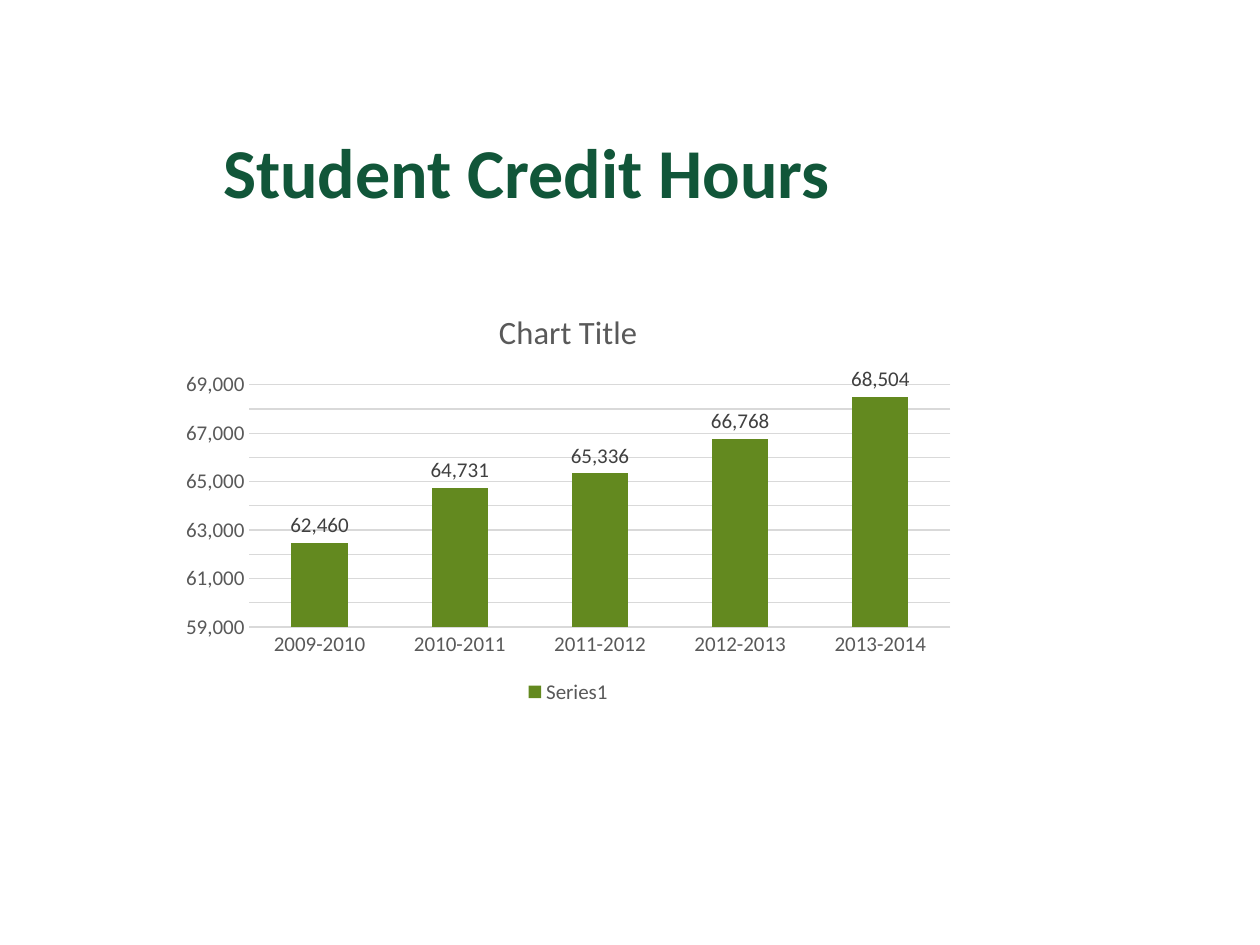
"""Build the Student Credit Hours slide with its column chart."""
from typing import NamedTuple

from pptx import Presentation
from pptx.chart.data import CategoryChartData
from pptx.dml.color import RGBColor
from pptx.enum.chart import (XL_CHART_TYPE, XL_LABEL_POSITION,
                             XL_LEGEND_POSITION, XL_TICK_MARK)
from pptx.enum.text import MSO_ANCHOR, MSO_AUTO_SIZE, PP_ALIGN
from pptx.util import Pt

GREEN, LEAF = "115639", "63891F"
GREY, DARK, PALE = "595959", "404040", "D9D9D9"


class Year(NamedTuple):
    span: str
    hours: int


YEARS = [
    Year("2009-2010", 62460),
    Year("2010-2011", 64731),
    Year("2011-2012", 65336),
    Year("2012-2013", 66768),
    Year("2013-2014", 68504),
]


def rgb(code: str) -> RGBColor:
    return RGBColor.from_string(code)


def style(font, size: float, color: str, bold: bool = False) -> None:
    font.name = "Calibri"
    font.size = Pt(size)
    font.bold = bold
    font.color.rgb = rgb(color)


def add_title(slide, text: str) -> None:
    title = slide.shapes.title
    title.left, title.top = Pt(120.24), Pt(39.6)
    title.width, title.height = Pt(612), Pt(115.92)
    frame = title.text_frame
    frame.text = text
    frame.word_wrap = True
    frame.auto_size = MSO_AUTO_SIZE.NONE
    frame.vertical_anchor = MSO_ANCHOR.MIDDLE
    line = frame.paragraphs[0]
    line.alignment = PP_ALIGN.LEFT
    style(line.runs[0].font, 40, GREEN, True)


def style_axis(axis) -> None:
    axis.major_tick_mark = axis.minor_tick_mark = XL_TICK_MARK.NONE
    style(axis.tick_labels.font, 12, GREY)


def add_hours(slide, years: list[Year]) -> None:
    data = CategoryChartData(number_format="#,##0")
    data.categories = [year.span for year in years]
    data.add_series("Series1", [year.hours for year in years])
    chart = slide.shapes.add_chart(
        XL_CHART_TYPE.COLUMN_CLUSTERED, Pt(97.2), Pt(164.88),
        Pt(455.04), Pt(240.48), data).chart
    style(chart.font, 10, "000000")

    chart.has_title = True
    frame = chart.chart_title.text_frame
    frame.text = "Chart Title"
    style(frame.paragraphs[0].runs[0].font, 18.6, GREY)
    chart.chart_title.include_in_layout = False

    chart.has_legend = True
    chart.legend.position = XL_LEGEND_POSITION.BOTTOM
    chart.legend.include_in_layout = False
    style(chart.legend.font, 12, GREY)

    style_axis(chart.category_axis)
    chart.category_axis.format.line.fill.background()

    scale = chart.value_axis
    style_axis(scale)
    scale.format.line.fill.background()
    scale.minimum_scale, scale.maximum_scale = 59000, 69000
    scale.major_unit = 1000
    scale.tick_labels.number_format = "#,##0"
    scale.tick_labels.number_format_is_linked = False
    grid = scale.major_gridlines.format.line
    grid.width = Pt(0.75)
    grid.color.rgb = rgb(PALE)

    plot = chart.plots[0]
    plot.gap_width = 150
    plot.vary_by_categories = False
    bars = plot.series[0]
    bars.format.fill.solid()
    bars.format.fill.fore_color.rgb = rgb(LEAF)
    tags = bars.data_labels
    tags.show_value = True
    tags.position = XL_LABEL_POSITION.OUTSIDE_END
    tags.number_format = "#,##0"
    tags.number_format_is_linked = False
    style(tags.font, 12, DARK)


def main() -> None:
    deck = Presentation()
    deck.slide_width, deck.slide_height = Pt(720), Pt(540)
    slide = deck.slides.add_slide(deck.slide_layouts[5])
    add_title(slide, "Student Credit Hours")
    add_hours(slide, YEARS)
    deck.save("out.pptx")


if __name__ == "__main__":
    main()
